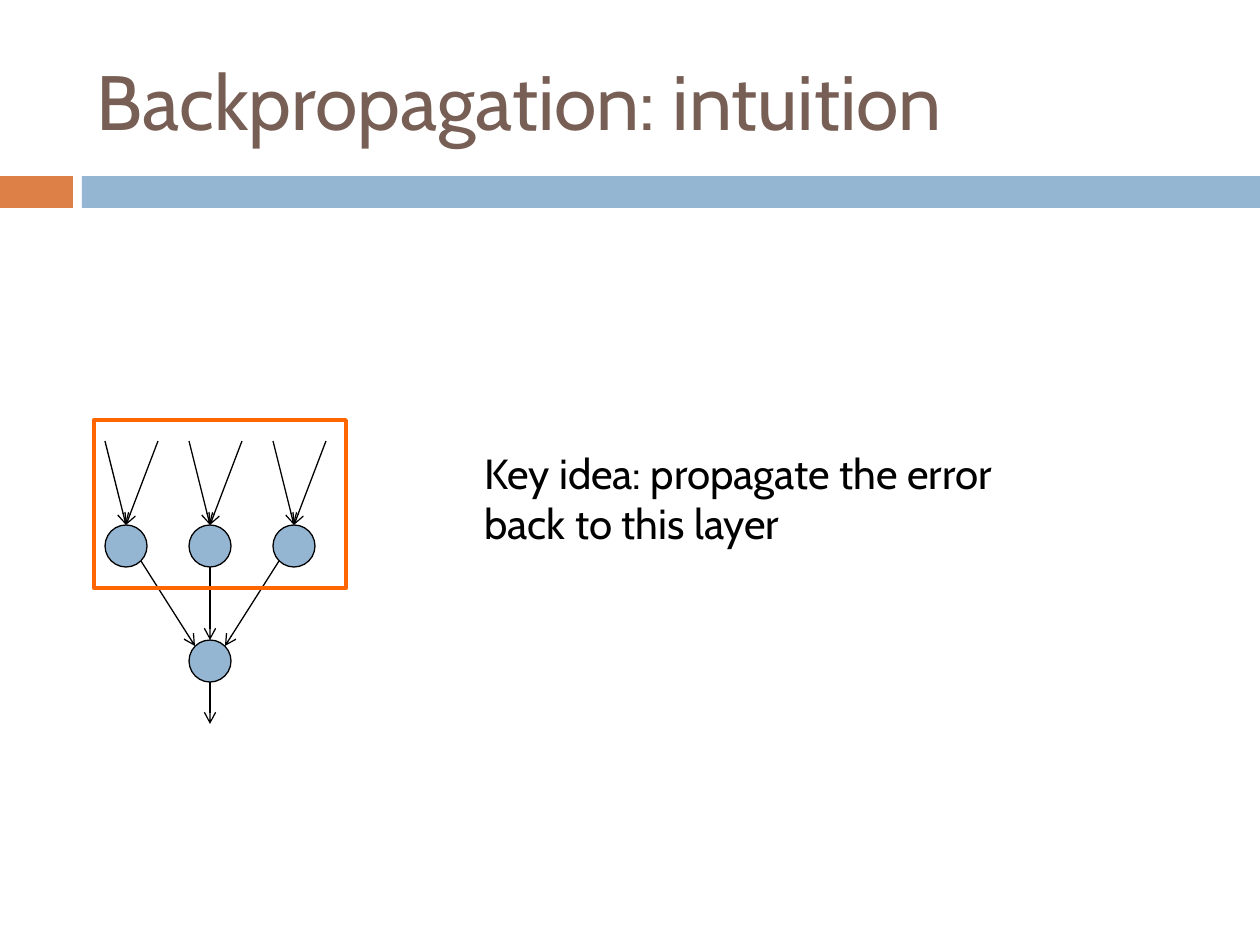
from typing import NamedTuple, Optional

from lxml.etree import SubElement
from pptx import Presentation
from pptx.dml.color import RGBColor
from pptx.enum.shapes import MSO_CONNECTOR, MSO_SHAPE
from pptx.enum.text import MSO_ANCHOR
from pptx.oxml.ns import qn
from pptx.util import Emu, Inches, Pt

PX = Inches(1) / 126
FONT = "Cabin"
BLACK = RGBColor(0x00, 0x00, 0x00)
BROWN = RGBColor(0x77, 0x5F, 0x55)
BLUE = RGBColor(0x94, 0xB6, 0xD2)
RUST = RGBColor(0xDD, 0x80, 0x47)
ORANGE = RGBColor(0xFF, 0x66, 0x00)


class Box(NamedTuple):
    left: int
    top: int
    width: int
    height: int


class Shape(NamedTuple):
    kind: MSO_SHAPE
    box: Box
    fill: Optional[RGBColor] = None
    line: Optional[RGBColor] = None
    weight: float = 0.75


class Arrow(NamedTuple):
    x1: int
    y1: int
    x2: int
    y2: int


class Label(NamedTuple):
    box: Box
    text: str
    size: int
    color: RGBColor
    anchor: MSO_ANCHOR = MSO_ANCHOR.TOP


def scale(sizes: tuple[int, ...]) -> list[Emu]:
    return [Emu(round(size * PX)) for size in sizes]


def draw_shape(slide, item: Shape) -> None:
    shape = slide.shapes.add_shape(item.kind, *scale(item.box))
    shape.shadow.inherit = False
    if item.fill is None:
        shape.fill.background()
    else:
        shape.fill.solid()
        shape.fill.fore_color.rgb = item.fill
    if item.line is None:
        shape.line.fill.background()
    else:
        shape.line.color.rgb = item.line
        shape.line.width = Pt(item.weight)


def draw_arrow(slide, item: Arrow) -> None:
    link = slide.shapes.add_connector(MSO_CONNECTOR.STRAIGHT, *scale(item))
    link.line.color.rgb = BLACK
    link.line.width = Pt(0.75)
    SubElement(link.line._get_or_add_ln(), qn("a:tailEnd"), type="arrow")
    SubElement(link._element.spPr, qn("a:effectLst"))


def draw_label(slide, item: Label) -> None:
    frame = slide.shapes.add_textbox(*scale(item.box)).text_frame
    frame.word_wrap = True
    frame.vertical_anchor = item.anchor
    para = frame.paragraphs[0]
    para.text = item.text
    para.font.name = FONT
    para.font.size = Pt(item.size)
    para.font.color.rgb = item.color


# Network grid
SIZE = 42
HALF = SIZE // 2
MIDS = [126 + 84 * col for col in range(3)]
MID = MIDS[1]
START, LAYER, OUT, END = 441, 525, 640, 724

BARS = [
    Shape(MSO_SHAPE.RECTANGLE, Box(0, 176, 73, 32), RUST),
    Shape(MSO_SHAPE.RECTANGLE, Box(82, 176, 1178, 32), BLUE),
]
NODES = [
    Shape(MSO_SHAPE.OVAL, Box(x - HALF, y, SIZE, SIZE), BLUE, BLACK)
    for x, y in [*((mid, LAYER) for mid in MIDS), (MID, OUT)]
]
INPUTS = [
    Arrow(mid + shift, START, mid, LAYER)
    for mid in MIDS for shift in (-HALF, 32)
]
LINKS = [
    Arrow(MID - 69, 561, MID - 15, 646),
    Arrow(MID, LAYER + SIZE, MID, OUT),
    Arrow(MID + 69, 561, MID + 15, 646),
]
EXIT = Arrow(MID, OUT + SIZE, MID, END)
FRAME = Shape(MSO_SHAPE.RECTANGLE, Box(94, 420, 252, 168), None, ORANGE, 2.25)
TITLE = Label(Box(84, 32, 1124, 136), "Backpropagation: intuition",
              44, BROWN, MSO_ANCHOR.MIDDLE)
IDEA = Label(Box(472, 441, 536, 115),
             "Key idea: propagate the error back to this layer", 24, BLACK)


def main() -> None:
    deck = Presentation()
    deck.slide_width, deck.slide_height = Inches(10), Inches(7.5)
    slide = deck.slides.add_slide(deck.slide_layouts[6])

    # Header
    for bar in BARS:
        draw_shape(slide, bar)
    draw_label(slide, TITLE)

    # Network
    for node in NODES:
        draw_shape(slide, node)
    for arrow in [*LINKS, *INPUTS, EXIT]:
        draw_arrow(slide, arrow)

    # Highlighted layer and its note
    draw_shape(slide, FRAME)
    draw_label(slide, IDEA)
    deck.save("out.pptx")


if __name__ == "__main__":
    main()
